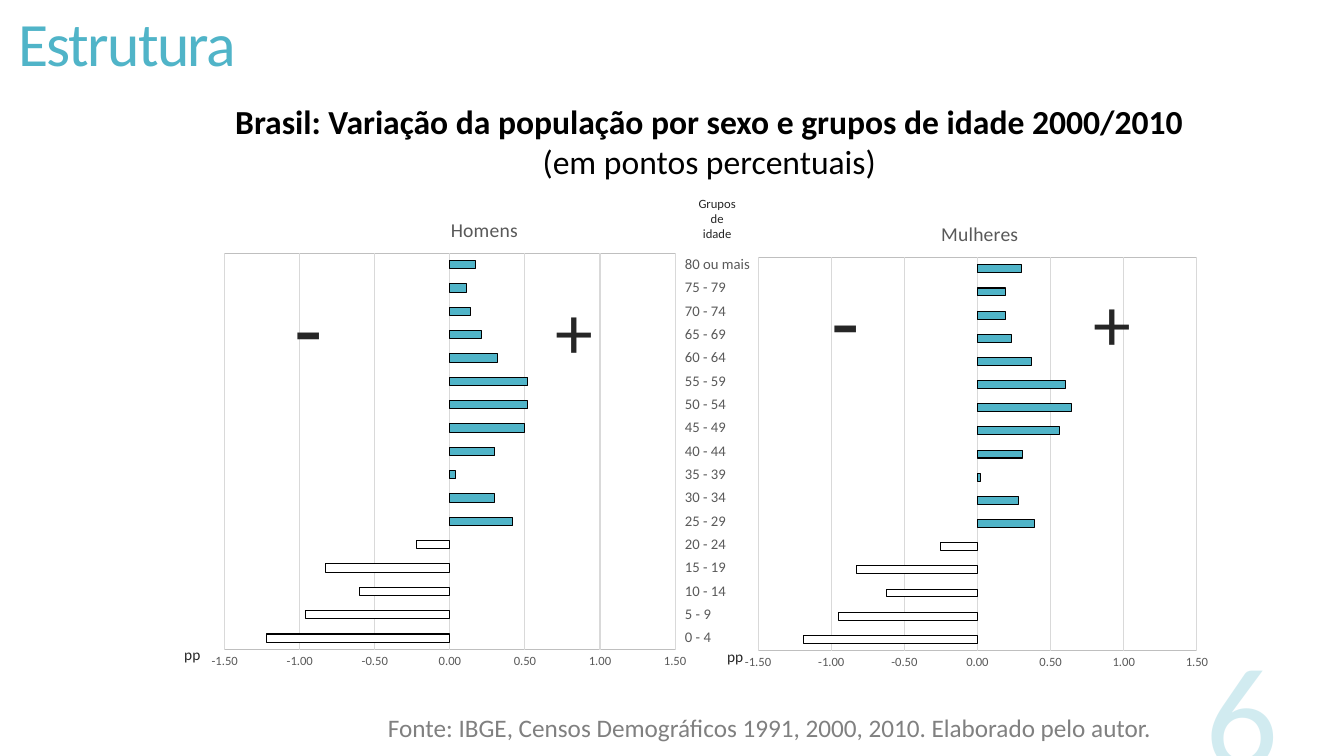
from dataclasses import dataclass

from pptx import Presentation
from pptx.chart.data import CategoryChartData
from pptx.dml.color import RGBColor
from pptx.enum.chart import XL_CHART_TYPE as ChartType
from pptx.enum.chart import XL_TICK_LABEL_POSITION as LabelAt
from pptx.enum.chart import XL_TICK_MARK as Tick
from pptx.enum.text import MSO_ANCHOR as Anchor
from pptx.enum.text import MSO_AUTO_SIZE as AutoSize
from pptx.enum.text import PP_ALIGN as Align
from pptx.oxml import parse_xml
from pptx.oxml.ns import nsdecls, qn
from pptx.util import Pt

PX = 9525


@dataclass
class Theme:
    font: str = "Calibri"
    accent: str = "50B4C8"
    white: str = "FFFFFF"
    black: str = "000000"
    ink: str = "262626"
    label: str = "595959"
    source: str = "808080"
    grid: str = "D9D9D9"
    frame: str = "BFBFBF"
    title: float = 44
    number: float = 103
    heading: float = 24
    footer: float = 18
    plus: float = 54
    minus: float = 66
    chart_title: float = 14
    unit: float = 11
    ages: float = 10.5
    chart: float = 10
    small: float = 9


theme = Theme()


def style(font, size, color, bold=False):
    font.name = theme.font
    font.size = Pt(size)
    font.bold = bold
    font.color.rgb = RGBColor.from_string(color)


def add_text(box, lines, size, color, align=Align.LEFT, anchor=Anchor.TOP):
    frame = slide.shapes.add_textbox(*[n * PX for n in box]).text_frame
    frame.word_wrap = True
    frame.vertical_anchor = anchor
    frame.text = "\n".join(lines)
    for paragraph in frame.paragraphs:
        paragraph.alignment = align
        style(paragraph.font, size, color)
    return frame.paragraphs


prs = Presentation()
prs.slide_width, prs.slide_height = 1280 * PX, 720 * PX
slide = prs.slides.add_slide(prs.slide_layouts[5])

title = slide.shapes.title
title.left, title.top, title.width, title.height = 8 * PX, 0, 294 * PX, 91 * PX
title.text_frame.text = "Estrutura"
title.text_frame.vertical_anchor = Anchor.MIDDLE
title.text_frame.auto_size = AutoSize.NONE
title_line = title.text_frame.paragraphs[0]
title_line.alignment = Align.LEFT
title_line.line_spacing = 0.85
style(title_line.font, theme.title, theme.accent)
title_line.runs[0].font._element.set("spc", "-120")

age_groups = [f"{age} - {age + 4}" for age in range(0, 80, 5)] + ["80 ou mais"]
shrinking_groups = 5
panels = [
    dict(
        sex="Mulheres", box=(700, 187, 459, 460), plot=(722, 245, 418, 375),
        heading=(893, 206), gap=193, overlap=7, ages_shown=False,
        unit=(683, 612, 48, 40), plus=(990, 258, 138, 78), minus=(736, 246, 138, 122),
        change=[-1.19, -0.95, -0.62, -0.83, -0.25, 0.39, 0.28, 0.02, 0.31,
                0.56, 0.64, 0.6, 0.37, 0.23, 0.19, 0.19, 0.3],
    ),
    dict(
        sex="Homens", box=(192, 183, 534, 463), plot=(214, 241, 429, 378),
        heading=(426, 203), gap=182, overlap=0, ages_shown=True,
        unit=(166, 610, 52, 40), plus=(478, 266, 138, 78), minus=(225, 253, 138, 122),
        change=[-1.22, -0.96, -0.6, -0.83, -0.22, 0.42, 0.3, 0.04, 0.3,
                0.5, 0.52, 0.52, 0.32, 0.21, 0.14, 0.11, 0.17],
    ),
]

for panel in panels:
    data = CategoryChartData(number_format="0.00")
    data.categories = age_groups
    data.add_series(panel["sex"], panel["change"])
    chart = slide.shapes.add_chart(
        ChartType.BAR_CLUSTERED, *[n * PX for n in panel["box"]], data
    ).chart
    style(chart.font, theme.chart, theme.black)
    chart.has_legend = False
    chart.has_title = True
    heading = chart.chart_title.text_frame
    heading.text = panel["sex"]
    style(heading.paragraphs[0].font, theme.chart_title, theme.label)

    bars = chart.plots[0]
    bars.gap_width = panel["gap"]
    bars.overlap = panel["overlap"]
    bars.vary_by_categories = False
    series = bars.series[0]
    series.invert_if_negative = False
    for part in [series] + [series.points[i] for i in range(shrinking_groups)]:
        color = theme.accent if part is series else theme.white
        part.format.fill.solid()
        part.format.fill.fore_color.rgb = RGBColor.from_string(color)
        part.format.line.color.rgb = RGBColor.from_string(theme.black)
        part.format.line.width = Pt(0.75)

    ages = chart.category_axis
    ages.visible = panel["ages_shown"]
    ages.has_major_gridlines = False
    ages.major_tick_mark = Tick.NONE
    ages.tick_label_position = LabelAt.HIGH
    ages.format.line.color.rgb = RGBColor.from_string(theme.grid)
    ages.format.line.width = Pt(0.75)
    style(ages.tick_labels.font, theme.ages, theme.label)

    points = chart.value_axis
    points.minimum_scale, points.maximum_scale = -1.5, 1.5
    points.major_unit = 0.5
    points.major_tick_mark = Tick.NONE
    points.format.line.fill.background()
    points.tick_labels.number_format = "0.00"
    points.tick_labels.number_format_is_linked = False
    style(points.tick_labels.font, theme.small, theme.label)
    points.major_gridlines.format.line.color.rgb = RGBColor.from_string(theme.grid)
    points.major_gridlines.format.line.width = Pt(0.75)

    left, top, width, height = panel["box"]
    plot_area = chart._chartSpace.chart.plotArea
    for parent, index, target, place in (
        (plot_area, 0, '<c:layoutTarget val="inner"/>', panel["plot"]),
        (chart.chart_title._element, 1, "", panel["heading"]),
    ):
        for old in parent.findall(qn("c:layout")):
            parent.remove(old)
        offsets = [place[0] - left, place[1] - top, *place[2:]]
        shares = zip("xywh", offsets, (width, height, width, height))
        values = [f'<c:{side} val="{length / full:.4f}"/>' for side, length, full in shares]
        modes = '<c:xMode val="edge"/><c:yMode val="edge"/>'
        parent.insert(index, parse_xml(
            f'<c:layout {nsdecls("c")}><c:manualLayout>{target}{modes}'
            f'{"".join(values)}</c:manualLayout></c:layout>'
        ))

    blank = f'<c:spPr {nsdecls("c", "a")}><a:noFill/><a:ln w="9525">%s</a:ln></c:spPr>'
    edge = f'<a:solidFill><a:srgbClr val="{theme.frame}"/></a:solidFill>'
    plot_area.append(parse_xml(blank % edge))
    chart._chartSpace.chart.addnext(parse_xml(blank % "<a:noFill/>"))

    add_text(panel["unit"], ["pp"], theme.unit, theme.ink)
    add_text(panel["plus"], ["+"], theme.plus, theme.ink, Align.CENTER)
    add_text(panel["minus"], ["-"], theme.minus, theme.ink, Align.CENTER)

page = add_text((920, 617, 307, 147), ["6"], theme.number, theme.accent,
                Align.RIGHT, Anchor.BOTTOM)[0]
page_color = page.font._element.find(".//" + qn("a:srgbClr"))
page_color.append(parse_xml(f'<a:alpha {nsdecls("a")} val="25000"/>'))

add_text((360, 674, 757, 38),
         ["Fonte: IBGE, Censos Demográficos 1991, 2000, 2010. Elaborado pelo autor."],
         theme.footer, theme.source)
add_text((631, 182, 104, 66), ["Grupos", "de", "idade"], theme.small, theme.ink, Align.CENTER)
headline = add_text(
    (186, 91, 979, 60),
    ["Brasil: Variação da população por sexo e grupos de idade 2000/2010",
     "(em pontos percentuais)"],
    theme.heading, theme.black, Align.CENTER,
)
headline[0].font.bold = True

prs.save("out.pptx")
